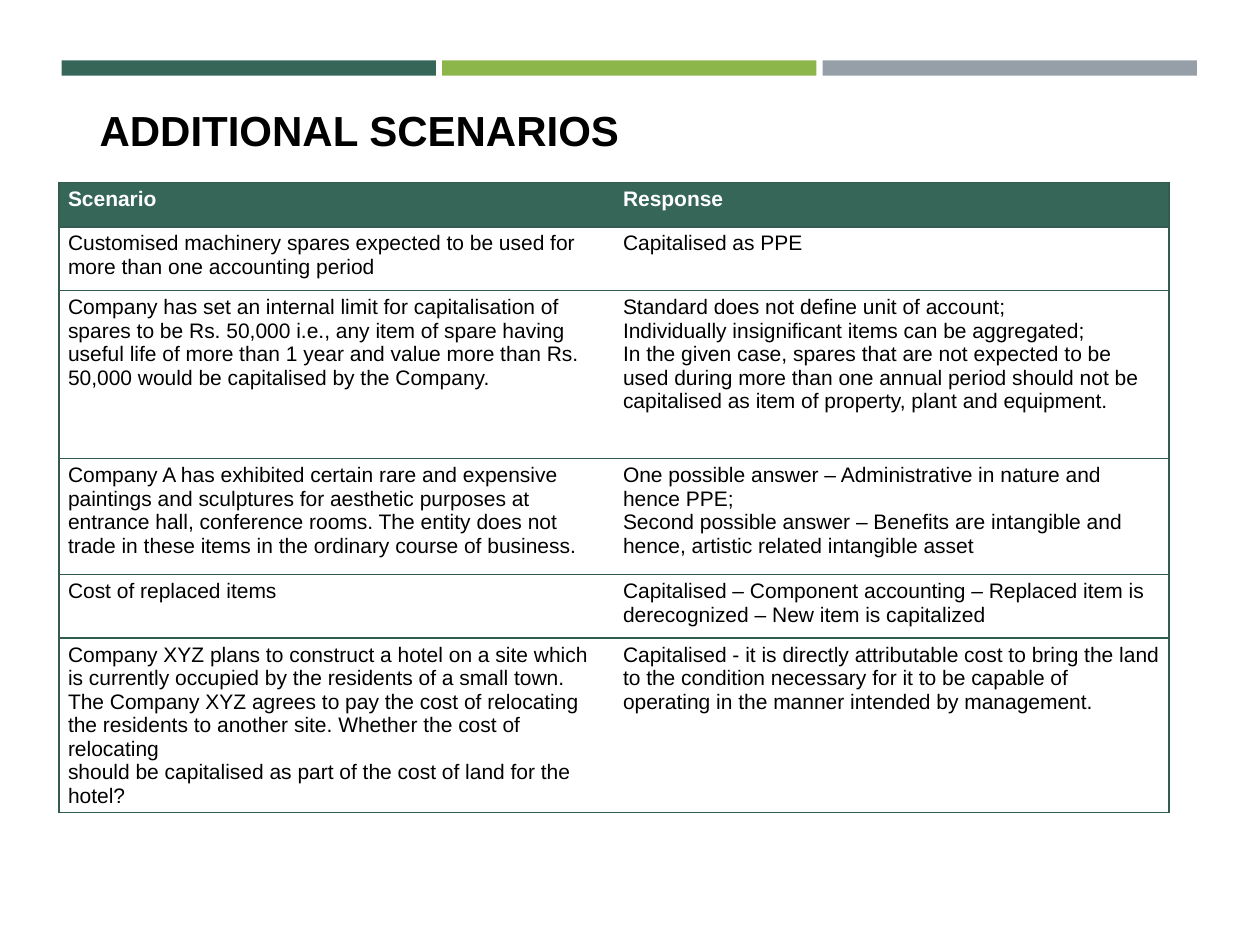
from lxml.etree import SubElement
from pptx import Presentation
from pptx.dml.color import RGBColor
from pptx.enum.shapes import MSO_SHAPE
from pptx.enum.text import MSO_ANCHOR, MSO_AUTO_SIZE, PP_ALIGN
from pptx.oxml.ns import qn
from pptx.util import Inches, Pt

COLUMNS, ROWS = 100, 75  # grid over the slide

SCENARIOS = [
    ("Scenario", "Response"),
    ("Customised machinery spares expected to be used for more than one accounting period",
     "Capitalised as PPE"),
    ("Company has set an internal limit for capitalisation of spares to be Rs. 50,000 i.e., "
     "any item of spare having useful life of more than 1 year and value more than "
     "Rs. 50,000 would be capitalised by the Company.",
     "Standard does not define unit of account;\n"
     "Individually insignificant items can be aggregated;\n"
     "In the given case, spares that are not expected to be used during more than one annual "
     "period should not be capitalised as item of property, plant and equipment."),
    ("Company A has exhibited certain rare and expensive paintings and sculptures for "
     "aesthetic purposes at entrance hall, conference rooms. The entity does not trade in "
     "these items in the ordinary course of business.",
     "One possible answer – Administrative in nature and hence PPE;\n"
     "Second possible answer – Benefits are intangible and hence, artistic related "
     "intangible asset"),
    ("Cost of replaced items",
     "Capitalised – Component accounting – Replaced item is derecognized – "
     "New item is capitalized"),
    ("Company XYZ plans to construct a hotel on a site which is currently occupied by the "
     "residents of a small town. The Company XYZ agrees to pay the cost of relocating the "
     "residents to another site. Whether the cost of relocating\n"
     "should be capitalised as part of the cost of land for the hotel?",
     "Capitalised - it is directly attributable cost to bring the land to the condition "
     "necessary for it to be capable of operating in the manner intended by management."),
]
ROW_HEIGHTS = [3.5, 5.05, 13.35, 9.2, 5.05, 13.75]


def color(value):
    return RGBColor.from_string(value)


class SlideBuilder:
    font = "Arial"
    ink, paper = "000000", "FFFFFF"
    accent, border = "366658", "315C4F"

    def __init__(self, presentation):
        self.slide = presentation.slides.add_slide(presentation.slide_layouts[5])
        self.column = presentation.slide_width / COLUMNS
        self.row = presentation.slide_height / ROWS

    def box(self, left, top, width, height):
        return (round(left * self.column), round(top * self.row),
                round(width * self.column), round(height * self.row))

    def style(self, text_frame, size, ink, bold):
        for paragraph in text_frame.paragraphs:
            paragraph.alignment = PP_ALIGN.LEFT
            paragraph.font.name = self.font
            paragraph.font.size = Pt(size)
            paragraph.font.bold = bold
            paragraph.font.color.rgb = color(ink)

    def bar(self, fill, *place):
        shape = self.slide.shapes.add_shape(MSO_SHAPE.RECTANGLE, *self.box(*place))
        shape.shadow.inherit = False
        shape.fill.solid()
        shape.fill.fore_color.rgb = color(fill)
        shape.line.fill.background()

    def title(self, text, *place):
        title = self.slide.shapes.title
        title.left, title.top, title.width, title.height = self.box(*place)
        frame = title.text_frame
        frame.text = text
        frame.auto_size = MSO_AUTO_SIZE.NONE
        frame.vertical_anchor = MSO_ANCHOR.BOTTOM
        frame.margin_left = frame.margin_right = frame.margin_top = frame.margin_bottom = 0
        self.style(frame, 24, self.ink, True)

    def cell_borders(self, cell, visible):
        properties = cell._tc.get_or_add_tcPr()
        for position, side in enumerate("LRTB"):
            line = SubElement(properties, qn(f"a:ln{side}"), w=str(Pt(1)))
            if side in visible:
                fill = SubElement(line, qn("a:solidFill"))
                SubElement(fill, qn("a:srgbClr"), val=self.border)
            else:
                SubElement(line, qn("a:noFill"))
            properties.insert(position, line)  # borders come before the fill

    def table(self, content, heights, left, top, width):
        last = len(content[0]) - 1
        table = self.slide.shapes.add_table(
            len(content), last + 1, *self.box(left, top, width, sum(heights))).table
        table.horz_banding = False
        for row, height in zip(table.rows, heights):
            row.height = round(height * self.row)
        for row_index, texts in enumerate(content):
            header = row_index == 0
            for column_index, text in enumerate(texts):
                cell = table.cell(row_index, column_index)
                cell.text = text
                cell.margin_left = cell.margin_right = Inches(0.07)
                cell.margin_top = cell.margin_bottom = Inches(0.04)
                if header:
                    cell.fill.solid()
                    cell.fill.fore_color.rgb = color(self.accent)
                else:
                    cell.fill.background()
                self.style(cell.text_frame, 12, self.paper if header else self.ink, header)
                outer = "L" * (column_index == 0) + "R" * (column_index == last)
                self.cell_borders(cell, "TB" + outer)


def main():
    presentation = Presentation()
    presentation.slide_width, presentation.slide_height = Inches(10), Inches(7.5)
    builder = SlideBuilder(presentation)

    # Three bars across the top
    for index, fill in enumerate(("366658", "8CB64A", "969FA7")):
        builder.bar(fill, 4.9 + index * 30.2, 4.8, 29.7, 1.2)

    # Title and table of scenarios
    builder.title("ADDITIONAL SCENARIOS", 7.9, 1.7, 84.9, 10.6)
    builder.table(SCENARIOS, ROW_HEIGHTS, 4.7, 14.5, 88.1)

    presentation.save("out.pptx")


if __name__ == "__main__":
    main()
